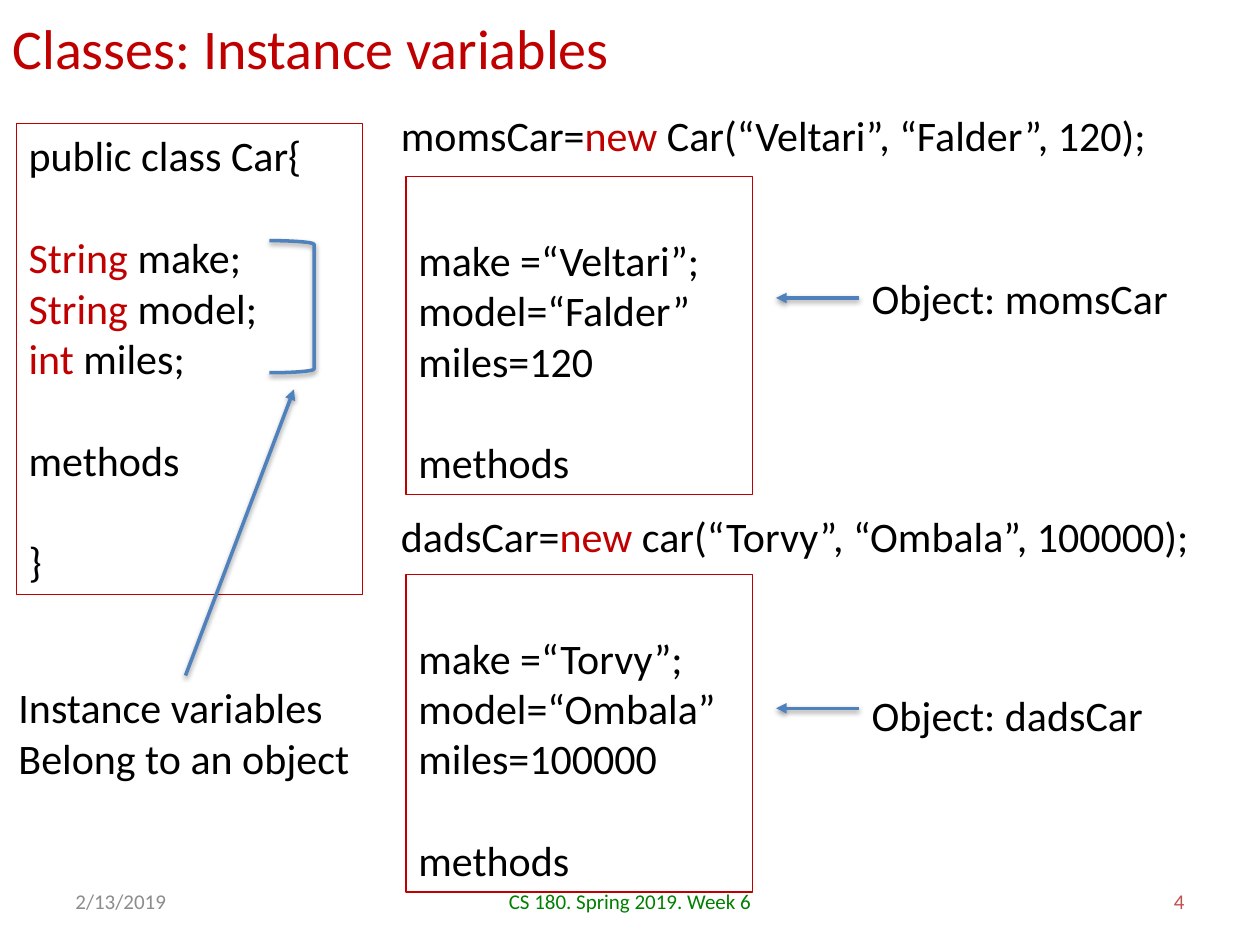
from pptx import Presentation
from pptx import util as u
from pptx.dml.color import RGBColor
from pptx.enum import shapes, text
from pptx.oxml import parse_xml
from pptx.oxml.ns import nsdecls, qn

RED, BLUE, BLACK = "C00000", "4F81BD", "000000"
LINE = 29.3  # height of one 24 pt line


def paint(fmt, color):
    fmt.rgb = RGBColor.from_string(color)


def write(slide, lines, x, y, w, h, size=24, color=BLACK, align="LEFT",
          mid=False, wrap=False, frame=False, top=3.6, gaps=()):
    """Text between bars is red; gaps lists the lines with a space above."""
    box = slide.shapes.add_textbox(u.Pt(x), u.Pt(y), u.Pt(w), u.Pt(h))
    if frame:
        paint(box.line.color, RED)
        box.line.width = u.Pt(0.75)
    body = box.text_frame
    body.word_wrap = wrap
    body.margin_top = u.Pt(top)
    body.vertical_anchor = text.MSO_ANCHOR.MIDDLE if mid else text.MSO_ANCHOR.TOP
    for i, line in enumerate(lines):
        para = body.add_paragraph() if i else body.paragraphs[0]
        para.alignment = text.PP_ALIGN[align]
        if i in gaps:
            para.space_before = u.Pt(LINE)
        for j, part in enumerate(line.split("|")):
            if part:
                run = para.add_run()
                run.text = part
                run.font.name, run.font.size = "Calibri", u.Pt(size)
                paint(run.font.color, RED if j % 2 else color)
    return box


def stroke(shape):
    """Blue line with a soft shadow below."""
    paint(shape.line.color, BLUE)
    shape.line.width = u.Pt(2)
    props = shape._element.spPr
    for old in props.findall(qn("a:effectLst")):
        props.remove(old)
    props.append(parse_xml(
        f'<a:effectLst {nsdecls("a")}><a:outerShdw blurRad="{u.Pt(3.1)}" '
        f'dist="{u.Pt(1.6)}" dir="5400000" rotWithShape="0">'
        '<a:srgbClr val="000000"><a:alpha val="38000"/></a:srgbClr>'
        '</a:outerShdw></a:effectLst>'))


def arrow(slide, x1, y1, x2, y2, box=None, side=0):
    line = slide.shapes.add_connector(
        shapes.MSO_CONNECTOR.STRAIGHT, u.Pt(x1), u.Pt(y1), u.Pt(x2), u.Pt(y2))
    if box is not None:
        line.begin_connect(box, side)
    stroke(line)
    line.line._get_or_add_ln().append(
        parse_xml(f'<a:tailEnd {nsdecls("a")} type="triangle"/>'))


def bracket(slide, x, y, w, h):
    mark = slide.shapes.add_shape(
        shapes.MSO_SHAPE.RIGHT_BRACKET, u.Pt(x), u.Pt(y), u.Pt(w), u.Pt(h))
    mark.fill.background()
    stroke(mark)


def car(slide, y, make, model, miles):
    """Frame with the values of one object."""
    lines = [f"make =“{make}”;", f"model=“{model}”", f"miles={miles}", "methods"]
    write(slide, lines, 232, y, 198, 181.5, wrap=True, frame=True,
          top=3.6 + LINE, gaps=(3,))


def main():
    deck = Presentation()
    deck.slide_width, deck.slide_height = u.Pt(720), u.Pt(540)
    slide = deck.slides.add_slide(deck.slide_layouts[6])

    # Title
    write(slide, ["Classes: Instance variables"], 0, 2, 520, 50,
          size=32, color=RED, mid=True, wrap=True)

    # Class definition
    write(slide, ["public class Car{", "|String| make;", "|String| model;",
                  "|int| miles;", "methods", "}"],
          9.25, 70.75, 198, 269, wrap=True, frame=True, gaps=(1, 4, 5))

    # Constructor calls
    write(slide, ["momsCar=|new| Car(“Veltari”, “Falder”, 120);"],
          222, 59, 443.5, 36)
    write(slide, ["dadsCar=|new| car(“Torvy”, “Ombala”, 100000);"],
          222, 288, 464.5, 36)

    # Objects with their labels
    car(slide, 101, "Veltari", "Falder", 120)
    mom = write(slide, ["Object: momsCar"], 491, 152.25, 185, 36)
    arrow(slide, 491, 170.25, 443.5, 170.25, mom, 1)
    car(slide, 328.25, "Torvy", "Ombala", 100000)
    write(slide, ["Object: dadsCar"], 491, 390.5, 171, 36)
    arrow(slide, 491, 404.75, 443.5, 404.75)

    # Note on instance variables
    note = write(slide, ["Instance variables", "Belong to an object"],
                 3.5, 386, 205, 65.5)
    bracket(slide, 154, 137.5, 25.5, 75.5)
    arrow(slide, 106, 386, 168, 222.5, note, 0)

    # Footer
    foot = dict(y=500.5, h=28.75, size=12, mid=True, wrap=True)
    write(slide, ["CS 180. Spring 2019. Week 6"], x=246, w=228,
          color="008000", align="CENTER", **foot)
    write(slide, ["2/13/2019"], x=36, w=168, color="8C8C8C", **foot)
    write(slide, ["4"], x=516, w=168, color="C0504D", align="RIGHT", **foot)

    deck.save("out.pptx")


if __name__ == "__main__":
    main()
